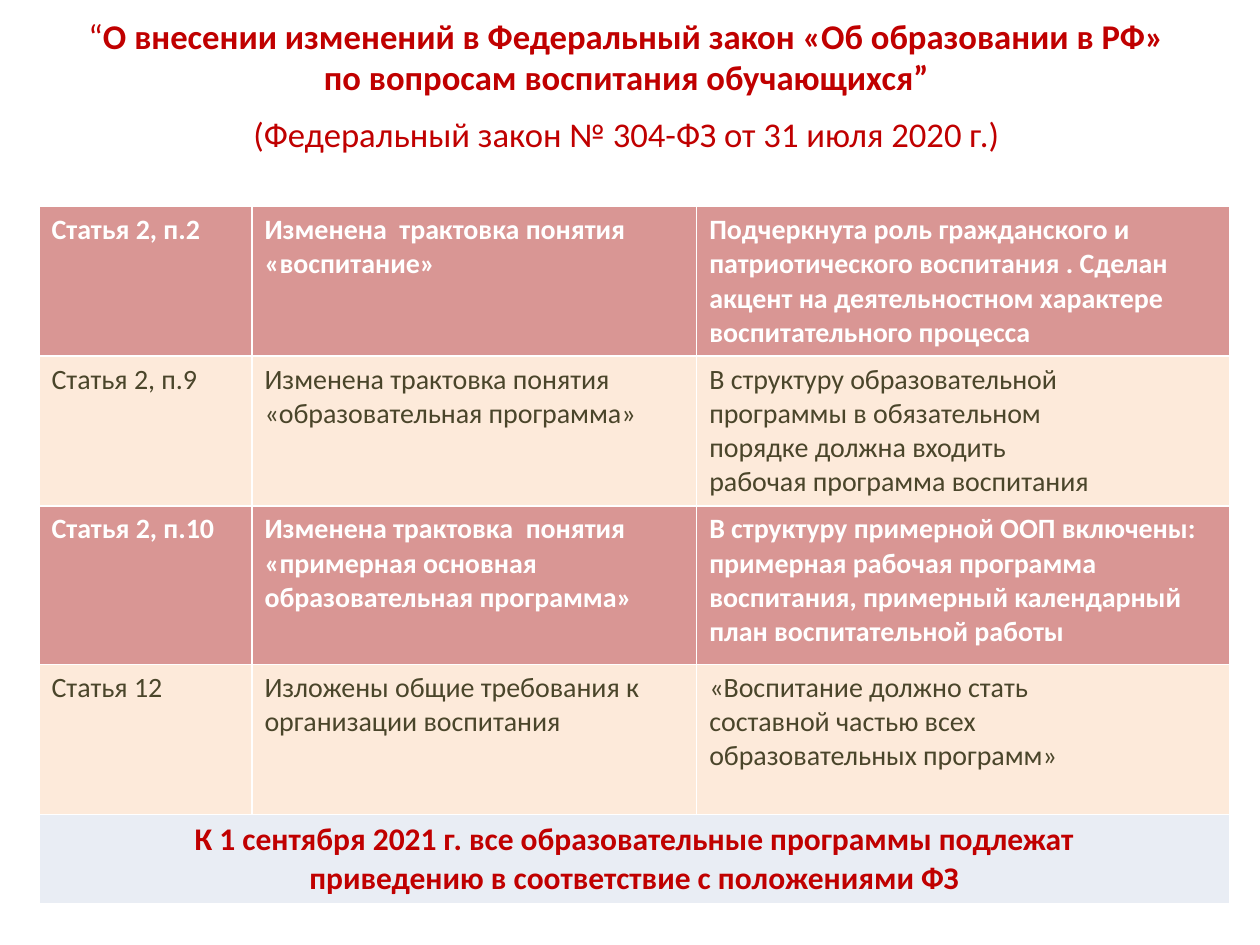
from pptx import Presentation
from pptx.dml.color import RGBColor as Rgb
from pptx.enum.text import MSO_ANCHOR as Anchor, PP_ALIGN as Align
from pptx.util import Inches, Pt

RED, WHITE, BROWN = "C00000", "FFFFFF", "4A452A"
ROSE, CREAM, PALE = "D99694", "FDEADA", "E9EDF4"

ROWS = [
    ("Статья 2, п.2",
     "Изменена  трактовка понятия «воспитание»",
     "Подчеркнута роль гражданского и патриотического воспитания . "
     "Сделан акцент на деятельностном характере воспитательного процесса"),
    ("Статья 2, п.9",
     "Изменена трактовка понятия «образовательная программа»",
     "В структуру образовательной\nпрограммы в обязательном\n"
     "порядке должна входить\nрабочая программа воспитания"),
    ("Статья 2, п.10",
     "Изменена трактовка  понятия «примерная основная образовательная программа»",
     "В структуру примерной ООП включены: примерная рабочая программа "
     "воспитания, примерный календарный план воспитательной работы"),
    ("Статья 12",
     "Изложены общие требования к\nорганизации воспитания",
     "«Воспитание должно стать\nсоставной частью всех\nобразовательных программ»"),
]
NOTE = ("К 1 сентября 2021 г. все образовательные программы подлежат\n"
        "приведению в соответствие с положениями ФЗ")
WIDTHS = [1.69, 3.53, 4.23]
HEIGHTS = [1.18, 1.18, 1.26, 1.19, 0.7]


def color(code):
    return Rgb.from_string(code)


def write(par, text, size=16, ink=BROWN, bold=False, align=Align.LEFT):
    par.alignment = align
    run = par.add_run()
    run.text = text
    font = run.font
    font.name, font.size, font.bold = "Calibri", Pt(size), bold
    font.color.rgb = color(ink)


class Page:
    def __init__(self, deck):
        self.slide = deck.slides.add_slide(deck.slide_layouts[5])
        self.head = {"size": 19.8, "ink": RED, "align": Align.CENTER}

    def title(self, lead, main, sub):
        box = self.slide.shapes.title
        box.left, box.top = Inches(0.47), Inches(0.16)
        box.width, box.height = Inches(9), Inches(1.02)
        frame = box.text_frame
        frame.word_wrap = True
        frame.vertical_anchor = Anchor.MIDDLE
        first = frame.paragraphs[0]
        write(first, lead, **self.head)
        write(first, main, bold=True, **self.head)
        last = frame.add_paragraph()
        last.space_before = Pt(8.6)
        write(last, sub, **self.head)

    def cell(self, cell, text, fill, **style):
        cell.fill.solid()
        cell.fill.fore_color.rgb = color(fill)
        frame = cell.text_frame
        for i, line in enumerate(text.split("\n")):
            par = frame.add_paragraph() if i else frame.paragraphs[0]
            write(par, line, **style)

    def table(self, rows, note):
        grid = self.slide.shapes.add_table(
            len(HEIGHTS), len(WIDTHS), Inches(0.31), Inches(1.64),
            Inches(sum(WIDTHS)), Inches(sum(HEIGHTS))).table
        for col, width in zip(grid.columns, WIDTHS):
            col.width = Inches(width)
        for row, height in zip(grid.rows, HEIGHTS):
            row.height = Inches(height)
        for r, texts in enumerate(rows):
            dark = r % 2 == 0
            for c, text in enumerate(texts):
                self.cell(grid.cell(r, c), text, ROSE if dark else CREAM,
                          ink=WHITE if dark else BROWN, bold=dark)
        end = len(rows)
        base = grid.cell(end, 0)
        base.merge(grid.cell(end, len(WIDTHS) - 1))
        self.cell(base, note, PALE, size=18, ink=RED, bold=True,
                  align=Align.CENTER)


def main():
    deck = Presentation()
    deck.slide_width, deck.slide_height = Inches(10), Inches(7.5)
    page = Page(deck)
    page.title("“",
               "О внесении изменений в Федеральный закон «Об образовании в РФ» "
               "по вопросам воспитания обучающихся”",
               "(Федеральный закон № 304-ФЗ от 31 июля 2020 г.)")
    page.table(ROWS, NOTE)
    deck.save("out.pptx")


if __name__ == "__main__":
    main()
